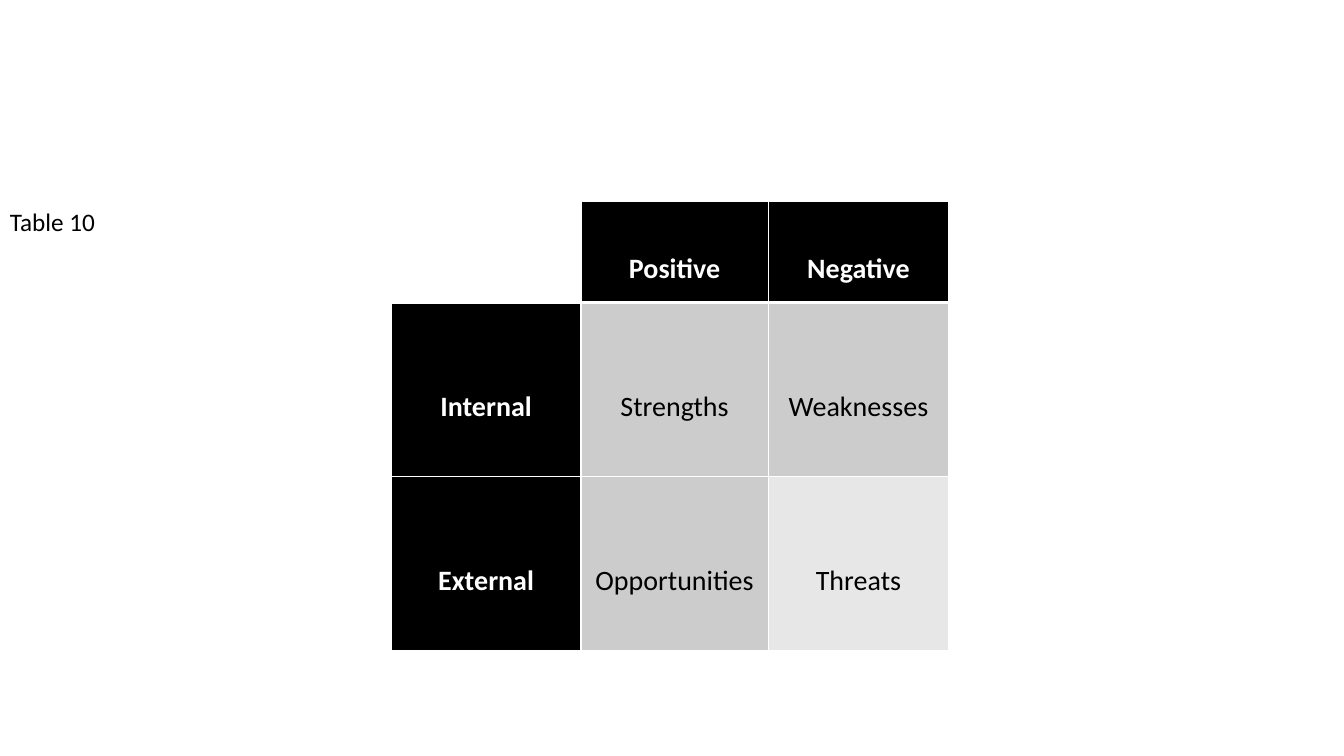
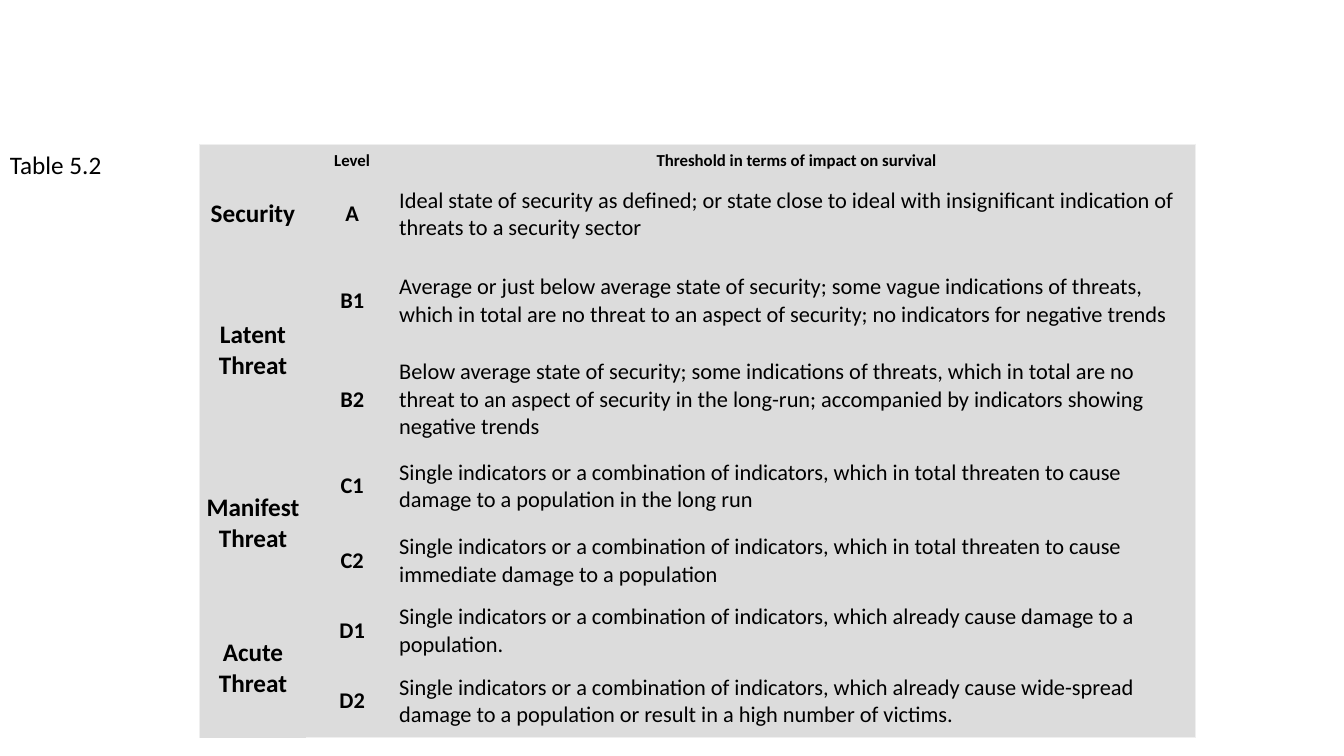
from pptx import Presentation
from pptx.dml.color import RGBColor
from pptx.enum.text import MSO_ANCHOR as Anchor, PP_ALIGN as Align
from pptx.oxml.ns import qn
from pptx.util import Cm, Pt
from lxml.etree import SubElement

BLACK = RGBColor(0x00, 0x00, 0x00)
WHITE = RGBColor(0xFF, 0xFF, 0xFF)
MID = RGBColor(0xCC, 0xCC, 0xCC)
LIGHT = RGBColor(0xE7, 0xE7, 0xE7)
PANEL = RGBColor(0xDC, 0xDC, 0xDC)
EDGE = RGBColor(0xEF, 0xEF, 0xEF)
FACE = "Calibri"
NO_GRID = "{2D5ABB26-0587-4C30-8999-92F81FD0307C}"

SWOT = [
    ("", "Positive", "Negative"),
    ("Internal", "Strengths", "Weaknesses"),
    ("External", "Opportunities", "Threats"),
]
SWOT_COLS = (4.78, 4.72, 4.55)
SWOT_ROWS = (2.54, 4.39, 4.39)

# An empty first column continues the group above it.
LEVELS = [
    ("", "Level", "Threshold in terms of impact on survival"),
    ("Security", "A", "Ideal state of security as defined; or state close to ideal "
     "with insignificant indication of threats to a security sector"),
    ("Latent Threat", "B1", "Average or just below average state of security; some vague "
     "indications of threats, which in total are no threat to an aspect of security; "
     "no indicators for negative trends"),
    ("", "B2", "Below average state of security; some indications of threats, which in "
     "total are no threat to an aspect of security in the long-run; accompanied by "
     "indicators showing negative trends"),
    ("Manifest Threat", "C1", "Single indicators or a combination of indicators, which in "
     "total threaten to cause damage to a population in the long run"),
    ("", "C2", "Single indicators or a combination of indicators, which in total threaten "
     "to cause immediate damage to a population"),
    ("Acute Threat", "D1", "Single indicators or a combination of indicators, which already "
     "cause damage to a population."),
    ("", "D2", "Single indicators or a combination of indicators, which already cause "
     "wide-spread damage to a population or result in a high number of victims."),
]
LEVEL_COLS = (2.69, 2.31, 20.09)
LEVEL_ROWS = (0.81, 1.88, 2.49, 2.49, 1.88, 1.88, 1.65, 1.88)


def style(par, size, color=BLACK, bold=False, align=Align.LEFT):
    par.alignment = align
    font = par.font
    font.name, font.size, font.bold = FACE, Pt(size), bold
    font.color.rgb = color


def add_label(slide, text, top, width, height):
    box = slide.shapes.add_textbox(Cm(0), Cm(top), Cm(width), Cm(height))
    frame = box.text_frame
    frame.word_wrap = False
    frame.text = text
    style(frame.paragraphs[0], 18)


def add_grid(slide, data, left, top, cols, rows, pad):
    """Add an unstyled table with its text; pad is left, top, right, bottom."""
    shape = slide.shapes.add_table(len(rows), len(cols), Cm(left), Cm(top),
                                   Cm(sum(cols)), Cm(sum(rows)))
    table = shape.table
    table.first_row = table.horz_banding = False
    table._tbl.tblPr.find(qn("a:tableStyleId")).text = NO_GRID
    for col, width in zip(table.columns, cols):
        col.width = Cm(width)
    for row, height, texts in zip(table.rows, rows, data):
        row.height = Cm(height)
        for cell, text in zip(row.cells, texts):
            cell.text = text
            cell.vertical_anchor = Anchor.MIDDLE
            (cell.margin_left, cell.margin_top,
             cell.margin_right, cell.margin_bottom) = map(Cm, pad)
    return table


def add_edges(cell, color, widths):
    """Draw cell borders; widths maps L, R, T, B (in that order) to points."""
    props = cell._tc.get_or_add_tcPr()
    for side, width in widths.items():
        line = SubElement(props, qn(f"a:ln{side}"), w=str(Pt(width)))
        fill = SubElement(line, qn("a:solidFill"))
        SubElement(fill, qn("a:srgbClr"), val=str(color))


def paint(cell, color):
    cell.fill.solid()
    cell.fill.fore_color.rgb = color


def build_swot(slide):
    table = add_grid(slide, SWOT, 9.86, 5.08, SWOT_COLS, SWOT_ROWS,
                     (0.18, 0, 0.18, 0))
    for r, texts in enumerate(SWOT):
        for c, text in enumerate(texts):
            cell = table.cell(r, c)
            add_edges(cell, WHITE, {"L": 1, "R": 1, "T": 3 if r == 1 else 1,
                                    "B": 3 if r == 0 else 1})
            if not text:
                continue
            head = r == 0 or c == 0
            paint(cell, BLACK if head else LIGHT if text == "Threats" else MID)
            par = cell.text_frame.paragraphs[0]
            par.line_spacing = 2.0
            style(par, 20, WHITE if head else BLACK, head, Align.CENTER)
    add_label(slide, "Table 10", 5.08, 2.69, 1.8)


def build_levels(slide):
    table = add_grid(slide, LEVELS, 5.03, 3.63, LEVEL_COLS, LEVEL_ROWS,
                     (0.03, 0.03, 0.03, 0))
    last, end = len(LEVELS) - 1, len(LEVEL_COLS) - 1
    for r, texts in enumerate(LEVELS):
        for c in range(len(texts)):
            cell = table.cell(r, c)
            outer = {"L": c == 0, "R": c == end, "T": r == 0, "B": r == last}
            add_edges(cell, EDGE, {side: 0.5 for side, on in outer.items() if on})
            paint(cell, PANEL)
            body = r > 0 and c == end
            size = 12 if r == 0 else 18 if c == 0 else 16
            style(cell.text_frame.paragraphs[0], size, bold=not body,
                  align=Align.LEFT if body else Align.CENTER)
        if r > 1 and not texts[0]:
            table.cell(r - 1, 0).merge(table.cell(r, 0))
    add_label(slide, "Table 5.2", 3.63, 2.84, 1.02)


def main():
    deck = Presentation()
    deck.slide_width, deck.slide_height = Cm(33.87), Cm(19.05)
    blank = deck.slide_layouts[6]
    for build in (build_swot, build_levels):
        build(deck.slides.add_slide(blank))
    deck.save("out.pptx")


if __name__ == "__main__":
    main()
